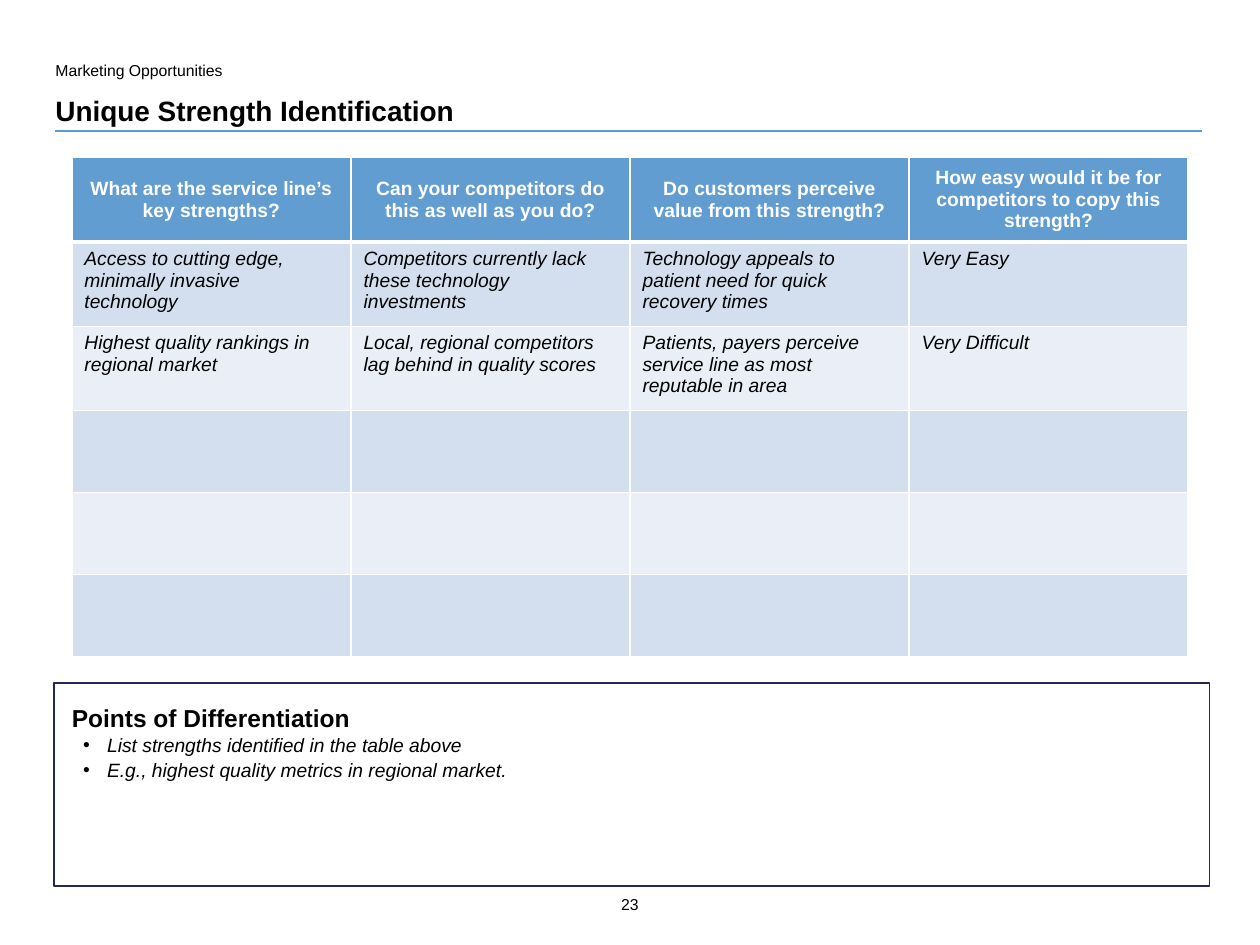
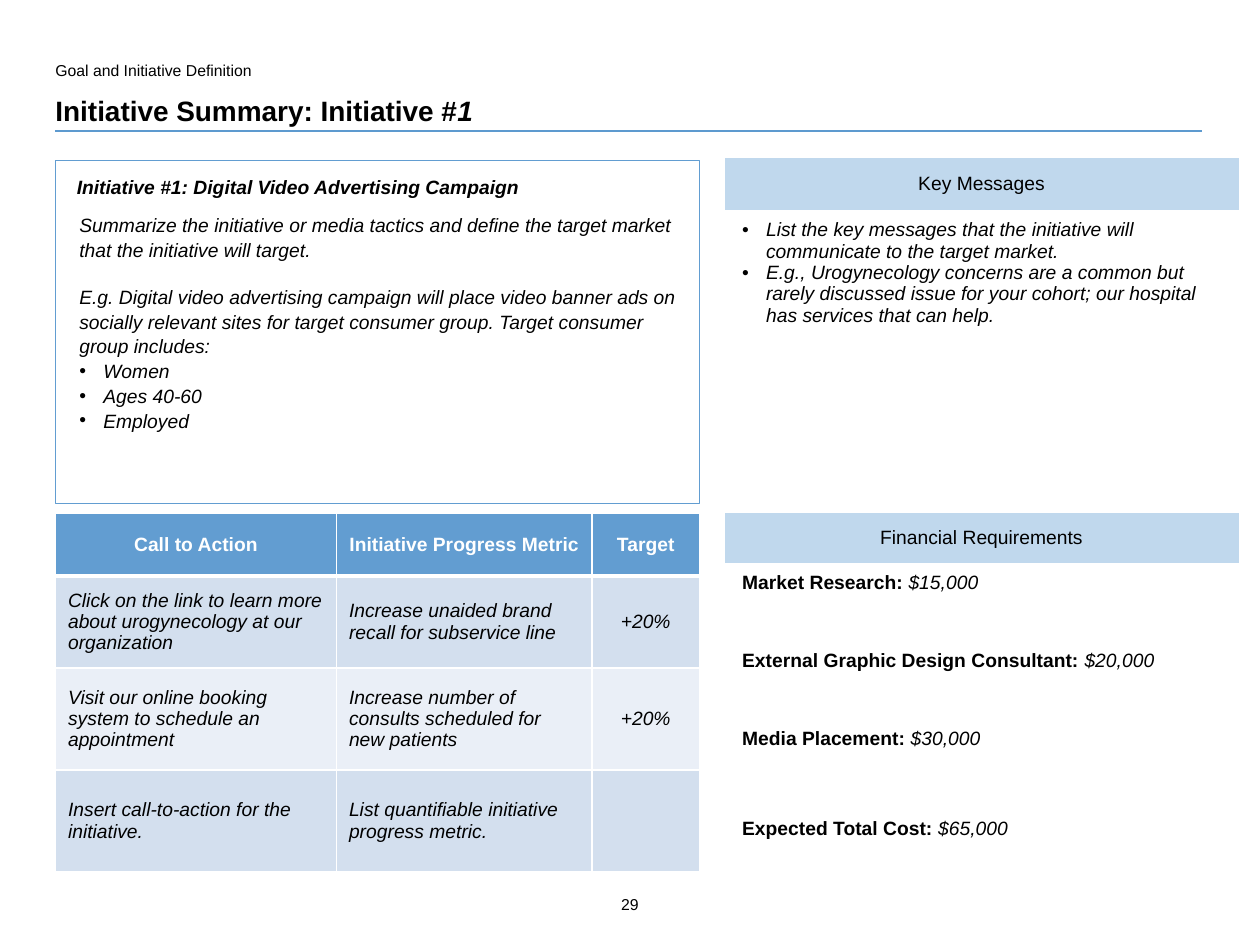
"""Build two planning slides: unique strengths and an initiative summary."""
from lxml.etree import SubElement as add_node
from pptx import Presentation
from pptx.dml.color import RGBColor
from pptx.enum.shapes import MSO_CONNECTOR as Connector, MSO_SHAPE as Preset
from pptx.enum.text import MSO_ANCHOR as Anchor, MSO_AUTO_SIZE as AutoSize, PP_ALIGN as Align
from pptx.oxml.ns import qn
from pptx.util import Inches, Pt

colour = RGBColor.from_string
BLACK, WHITE, NAVY = "000000", "FFFFFF", "242852"
RULE, BLUE, PALE = "5D9ACF", "629DD1", "C0D8ED"
BANDS = ["D3DFEE", "EAEFF7"]
LEFT, RIGHT = 0.44, 5.75
TOP, MIDDLE = 1.25, 4.07
LEFT_WIDTH, RIGHT_WIDTH = 5.11, 4.08
INDENT = 0.19


def write(frame, text, tail="", size=11, ink=BLACK, bold=False, italic=False,
          tail_bold=False, align=Align.LEFT, bullet=False, before=0, spacing=1.0):
    """Add one paragraph, with an optional italic tail."""
    para = frame.add_paragraph() if frame.text else frame.paragraphs[0]
    para.alignment, para.line_spacing = align, spacing
    para.space_before, para.space_after = Pt(before), Pt(0)
    props = para._p.get_or_add_pPr()
    indent = Inches(INDENT) if bullet else 0
    props.set("marL", str(indent))
    props.set("indent", str(-indent))
    if bullet:
        add_node(props, qn("a:buFont"), typeface="Arial")
        add_node(props, qn("a:buChar"), char="•")
    else:
        add_node(props, qn("a:buNone"))
    for words, heavy, slanted in [(text, bold, italic), (tail, tail_bold, True)]:
        if words:
            span = para.add_run()
            span.text = words
            font = span.font
            font.name, font.size, font.bold, font.italic = "Arial", Pt(size), heavy, slanted
            font.color.rgb = colour(ink)


def place_table(page, left, top, widths, heights, header_fill, bands, inset=(0.1, 0.05)):
    """Add a table with filled bands and white borders, or plain cells without bands."""
    table = page.shapes.add_table(
        len(heights), len(widths), Inches(left), Inches(top),
        Inches(sum(widths)), Inches(sum(heights))).table
    table.horz_banding = table.first_row = False
    for column, width in zip(table.columns, widths):
        column.width = Inches(width)
    for number, height in enumerate(heights):
        table.rows[number].height = Inches(height)
        for cell in table.rows[number].cells:
            cell.margin_left = cell.margin_right = Inches(inset[0])
            cell.margin_top = cell.margin_bottom = Inches(inset[1])
            cell.vertical_anchor = Anchor.TOP if number else Anchor.MIDDLE
            props = cell._tc.get_or_add_tcPr()
            for side in ("lnL", "lnR", "lnT", "lnB"):
                thick = (number, side) in [(0, "lnB"), (1, "lnT")]
                line = add_node(props, qn("a:" + side), w=str(Pt(3 if thick else 1)))
                if bands:
                    fill = add_node(line, qn("a:solidFill"))
                    add_node(fill, qn("a:srgbClr"), val=WHITE)
                else:
                    add_node(line, qn("a:noFill"))
            if number == 0 or bands:
                cell.fill.solid()
                cell.fill.fore_color.rgb = colour(
                    bands[(number - 1) % len(bands)] if number else header_fill)
            else:
                cell.fill.background()
    return table


deck = Presentation()
deck.slide_width, deck.slide_height = Inches(10), Inches(7.5)

pages = []
for section, title, title_tail, page_number in [
        ("Marketing Opportunities", "Unique Strength Identification", "", "23"),
        ("Goal and Initiative Definition", "Initiative Summary: Initiative #", "1", "29")]:
    page = deck.slides.add_slide(deck.slide_layouts[1])
    pages.append(page)
    rule = page.shapes.add_connector(
        Connector.STRAIGHT, Inches(LEFT), Inches(1.04), Inches(9.54), Inches(1.04))
    rule.line.color.rgb, rule.line.width = colour(RULE), Pt(0.75)
    add_node(rule._element.spPr, qn("a:effectLst"))
    heading, kicker = page.shapes.title, page.placeholders[1]
    footer = page.shapes.add_textbox(0, 0, 0, 0)
    for box, place, inset, anchor in [
            (heading, (LEFT, 0.74, 9.09, 0.27), (0, 0), Anchor.BOTTOM),
            (kicker, (LEFT, 0.44, 2.89, 0.2), (0, 0.04), Anchor.TOP),
            (footer, (4.66, 7.06, 0.68, 0.26), (0.04, 0.04), Anchor.TOP)]:
        box.left, box.top, box.width, box.height = map(Inches, place)
        frame = box.text_frame
        frame.word_wrap, frame.auto_size = True, AutoSize.NONE
        frame.vertical_anchor = anchor
        frame.margin_left = frame.margin_right = Inches(inset[0])
        frame.margin_top = frame.margin_bottom = Inches(inset[1])
    write(heading.text_frame, title, tail=title_tail, size=16, bold=True, tail_bold=True)
    write(kicker.text_frame, section, size=9)
    write(footer.text_frame, page_number, size=9, align=Align.CENTER)
strengths, initiative = pages

for page, place, fill, edge, weight in [
        (strengths, (0.43, 5.42, 9.17, 1.61), None, NAVY, 1),
        (initiative, (LEFT, 1.27, LEFT_WIDTH, 2.73), WHITE, BLUE, 0.5)]:
    panel = page.shapes.add_shape(Preset.RECTANGLE, *map(Inches, place))
    panel.shadow.inherit = False
    panel.line.color.rgb, panel.line.width = colour(edge), Pt(weight)
    if fill:
        panel.fill.solid()
        panel.fill.fore_color.rgb = colour(fill)
    else:
        panel.fill.background()

body = {"italic": True, "spacing": 1.07}
item = {**body, "bullet": True}
for page, place, inset, lines in [
        (strengths, (0.43, 5.51, 8.46, 0.38), (0.14, 0.07), [
            ("Points of Differentiation", {"size": 14, "bold": True})]),
        (strengths, (0.61, 5.76, 8.7, 0.87), (0.05, 0.05), [
            ("List strengths identified in the table above", item),
            ("E.g., highest quality metrics in regional market.", item)]),
        (initiative, (0.56, 1.33, 4.86, 0.29), (0.05, 0.05), [
            ("Initiative #1: Digital Video Advertising Campaign", {**body, "bold": True})]),
        (initiative, (0.58, 1.63, 4.86, 2.14), (0.05, 0.05), [
            ("Summarize the initiative or media tactics and define the target market "
             "that the initiative will target.", body),
            ("E.g. Digital video advertising campaign will place video banner ads on "
             "socially relevant sites for target consumer group. Target consumer group "
             "includes:", {**body, "before": 13}),
            ("Women", item), ("Ages 40-60", item), ("Employed", item)])]:
    frame = page.shapes.add_textbox(*map(Inches, place)).text_frame
    frame.word_wrap = True
    frame.margin_left = frame.margin_right = Inches(inset[0])
    frame.margin_top = frame.margin_bottom = Inches(inset[1])
    for text, style in lines:
        write(frame, text, **style)

strength_rows = [
    ["What are the service line’s key strengths?",
     "Can your competitors do this as well as you do?",
     "Do customers perceive value from this strength?",
     "How easy would it be for competitors to copy this strength?"],
    ["Access to cutting edge, minimally invasive technology",
     "Competitors currently lack these technology investments",
     "Technology appeals to patient need for quick recovery times", "Very Easy"],
    ["Highest quality rankings in regional market",
     "Local, regional competitors lag behind in quality scores",
     "Patients, payers perceive service line as most reputable in area", "Very Difficult"]]
action_rows = [
    ["Call to Action", "Initiative Progress Metric", "Target"],
    ["Click on the link to learn more about urogynecology at our organization",
     "Increase unaided brand recall for subservice line", "+20%"],
    ["Visit our online booking system to schedule an appointment",
     "Increase number of consults scheduled for new patients", "+20%"],
    ["Insert call-to-action for the initiative.",
     "List quantifiable initiative progress metric."]]

strength_table = place_table(
    strengths, 0.57, TOP, [2.215] * 4, [0.67] * 3 + [0.65] * 3, BLUE, BANDS)
action_table = place_table(
    initiative, LEFT, MIDDLE, [2.23, 2.03, 0.85], [0.5, 0.73, 0.81, 0.81], BLUE, BANDS)
for table, rows, anchor in [(strength_table, strength_rows, Anchor.TOP),
                            (action_table, action_rows, Anchor.MIDDLE)]:
    for number, texts in enumerate(rows):
        for column, text in enumerate(texts):
            cell = table.cell(number, column)
            if number == 0:
                write(cell.text_frame, text, ink=WHITE, bold=True, align=Align.CENTER)
            else:
                cell.vertical_anchor = anchor
                write(cell.text_frame, text, italic=True,
                      align=Align.CENTER if text == "+20%" else Align.LEFT)

message_table, cost_table = [
    place_table(initiative, RIGHT, top, [RIGHT_WIDTH], heights, PALE, None, (0.14, 0.07))
    for top, heights in [(TOP, [0.42, 2.33]), (MIDDLE, [0.4, 0.62, 0.62, 0.71, 0.65])]]
for table, header in [(message_table, "Key Messages"), (cost_table, "Financial Requirements")]:
    write(table.cell(0, 0).text_frame, header, align=Align.CENTER)
for message in [
        "List the key messages that the initiative will communicate to the target market.",
        "E.g., Urogynecology concerns are a common but rarely discussed issue for your "
        "cohort; our hospital has services that can help."]:
    write(message_table.cell(1, 0).text_frame, message, italic=True, bullet=True)
for number, (label, amount) in enumerate([
        ("Market Research: ", "$15,000"),
        ("External Graphic Design Consultant: ", "$20,000"),
        ("Media Placement: ", "$30,000"),
        ("Expected Total Cost: ", "$65,000")], start=1):
    write(cost_table.cell(number, 0).text_frame, label, tail=amount, bold=True)

deck.save("out.pptx")
